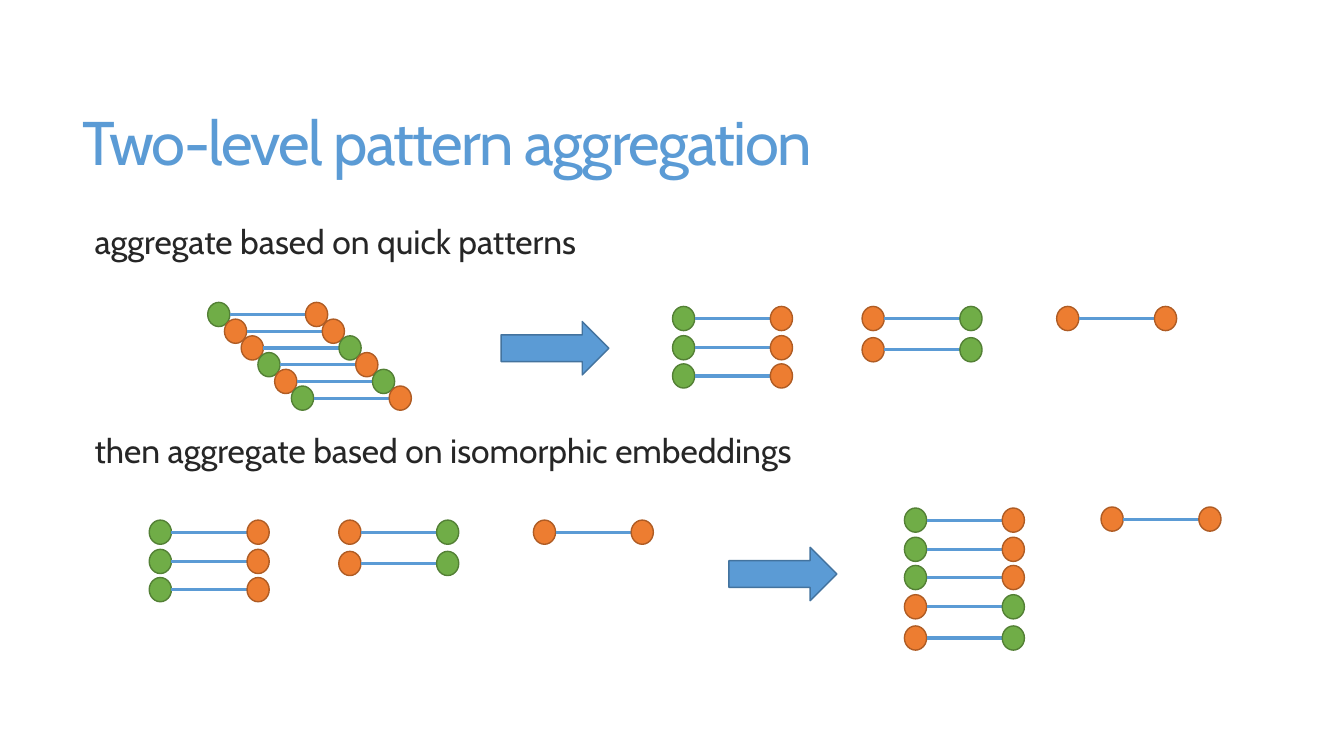
from dataclasses import dataclass

from lxml import etree
from pptx import Presentation
from pptx.dml.color import RGBColor
from pptx.enum.shapes import MSO_CONNECTOR, MSO_SHAPE
from pptx.enum.text import MSO_ANCHOR
from pptx.oxml.ns import qn
from pptx.util import Inches, Pt

OVAL = MSO_SHAPE.OVAL
RIGHT_ARROW = MSO_SHAPE.RIGHT_ARROW
STRAIGHT = MSO_CONNECTOR.STRAIGHT
TOP = MSO_ANCHOR.TOP
MIDDLE = MSO_ANCHOR.MIDDLE


@dataclass(frozen=True)
class Theme:
    font: str = "Cabin"
    title_size: float = 44
    body_size: float = 24
    line_spacing: float = 0.85
    title_tracking: float = -1.2
    outline: float = 1
    edge: float = 2.25
    blue: str = "5B9BD5"
    blue_outline: str = "43739E"
    green: str = "70AD47"
    green_outline: str = "538035"
    orange: str = "ED7D31"
    orange_outline: str = "AF5C24"
    body_color: str = "262626"


THEME = Theme()
NODE_COLORS = {
    "G": (THEME.green, THEME.green_outline),
    "O": (THEME.orange, THEME.orange_outline),
}
NODE_WIDTH, NODE_HEIGHT = 0.22, 0.24
NODE_DISTANCE = 0.97
EMBEDDINGS = ("GO", "OO", "OG", "GO", "OG", "GO")
CASCADE_STEP = 0.83 / 5
TRIPLE_ROWS = (0, 0.29, 0.57)
DOUBLE_ROWS = (0, 0.31)
DOUBLE_COLUMN, SINGLE_COLUMN = 1.88, 3.81
MERGED_DOUBLE_TOP = 0.86


def add_text(slide, box, text, size, color, anchor=TOP, tracking=0):
    shape = slide.shapes.add_textbox(*map(Inches, box))
    frame = shape.text_frame
    frame.word_wrap = True
    frame.vertical_anchor = anchor
    paragraph = frame.paragraphs[0]
    paragraph.line_spacing = THEME.line_spacing
    run = paragraph.add_run()
    run.text = text
    paragraph.font.name = THEME.font
    paragraph.font.size = Pt(size)
    paragraph.font.color.rgb = RGBColor.from_string(color)
    if tracking:
        run.font._element.set("spc", str(round(tracking * 100)))


def add_filled_shape(shapes, preset, box, fill, outline):
    shape = shapes.add_shape(preset, *map(Inches, box))
    shape.shadow.inherit = False
    shape.fill.solid()
    shape.fill.fore_color.rgb = RGBColor.from_string(fill)
    shape.line.color.rgb = RGBColor.from_string(outline)
    shape.line.width = Pt(THEME.outline)


def add_node(shapes, left, top, kind):
    box = (left, top, NODE_WIDTH, NODE_HEIGHT)
    add_filled_shape(shapes, OVAL, box, *NODE_COLORS[kind])


def add_pair(shapes, left, top, kinds):
    first, second = kinds
    center = top + NODE_HEIGHT / 2
    add_node(shapes, left, top, first)
    edge = shapes.add_connector(
        STRAIGHT,
        Inches(left + NODE_WIDTH), Inches(center),
        Inches(left + NODE_DISTANCE), Inches(center),
    )
    edge.line.color.rgb = RGBColor.from_string(THEME.blue)
    edge.line.width = Pt(THEME.edge)
    etree.SubElement(edge._element.spPr, qn("a:effectLst"))
    add_node(shapes, left + NODE_DISTANCE, top, second)


def add_column(shapes, left, top, kinds, rows):
    for row in rows:
        add_pair(shapes, left, top + row, kinds)


def add_cascade(shapes, left, top):
    for index, kinds in enumerate(EMBEDDINGS):
        offset = index * CASCADE_STEP
        add_pair(shapes, left + offset, top + offset, kinds)


def add_quick_patterns(shapes, left, top):
    add_column(shapes, left, top, "GO", TRIPLE_ROWS)
    add_column(shapes, left + DOUBLE_COLUMN, top, "OG", DOUBLE_ROWS)
    add_pair(shapes, left + SINGLE_COLUMN, top, "OO")


def add_merged_patterns(shapes, left, top):
    add_column(shapes, left, top, "GO", TRIPLE_ROWS)
    add_column(shapes, left, top + MERGED_DOUBLE_TOP, "OG", DOUBLE_ROWS)
    add_pair(shapes, left + 1.95, top - 0.01, "OO")


def add_arrow(shapes, left, top):
    add_filled_shape(shapes, RIGHT_ARROW, (left, top, 1.07, 0.53),
                     THEME.blue, THEME.blue_outline)


def add_quick_stage(slide, left, top):
    add_text(slide, (left, top, 11.66, 0.5), "aggregate based on quick patterns",
             THEME.body_size, THEME.body_color)
    shapes = slide.shapes.add_group_shape().shapes
    add_cascade(shapes, left + 1.22, top + 0.8)
    add_arrow(shapes, left + 4.13, top + 0.99)
    add_quick_patterns(shapes, left + 5.83, top + 0.84)


def add_isomorphic_stage(slide, left, top):
    add_text(slide, (left, top, 11.66, 0.5),
             "then aggregate based on isomorphic embeddings",
             THEME.body_size, THEME.body_color)
    shapes = slide.shapes.add_group_shape().shapes
    add_quick_patterns(shapes, left + 0.64, top + 0.88)
    add_arrow(shapes, left + 6.39, top + 1.15)
    add_merged_patterns(shapes, left + 8.13, top + 0.76)


def main():
    presentation = Presentation()
    presentation.slide_width = Inches(13.33)
    presentation.slide_height = Inches(7.5)
    slide = presentation.slides.add_slide(presentation.slide_layouts[6])
    add_text(slide, (0.72, 0.55, 11.78, 1.81), "Two-level pattern aggregation",
             THEME.title_size, THEME.blue, MIDDLE, THEME.title_tracking)
    add_quick_stage(slide, 0.84, 2.2)
    add_isomorphic_stage(slide, 0.84, 4.28)
    presentation.save("out.pptx")


if __name__ == "__main__":
    main()
